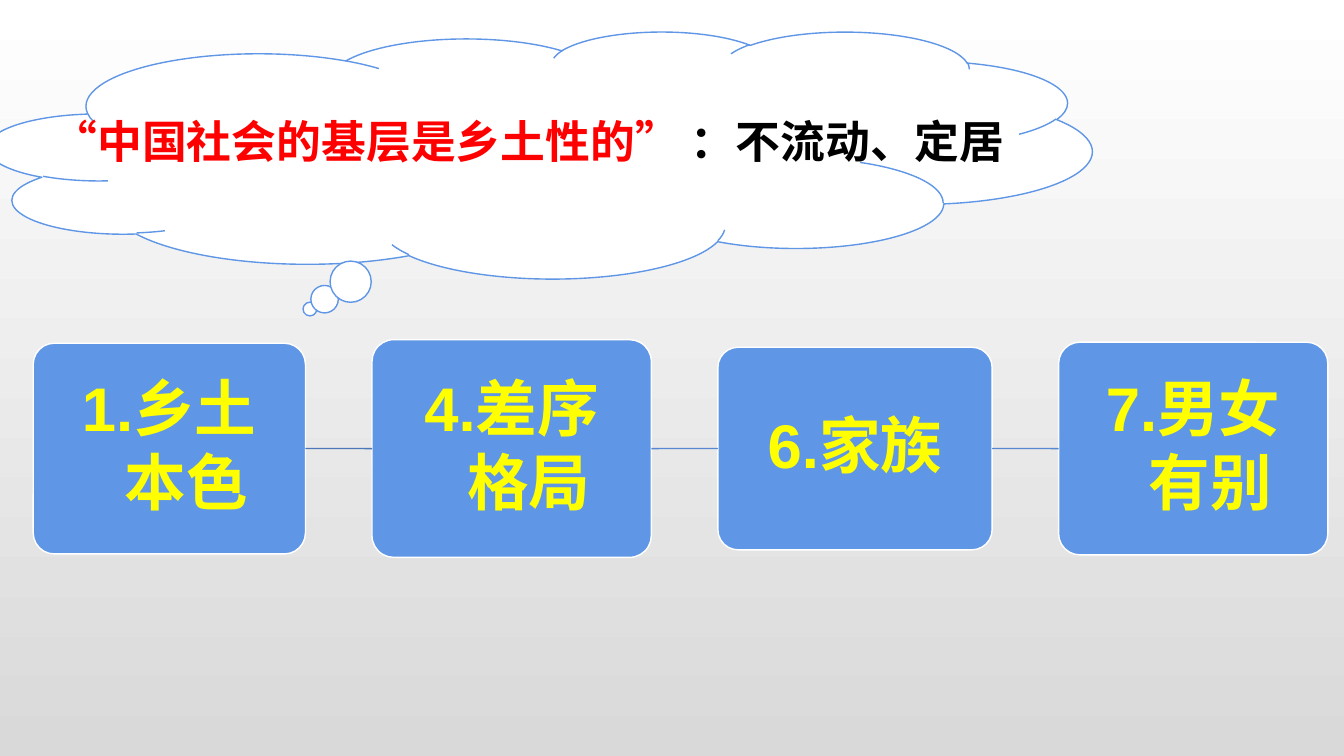
"""Build a slide with a thought cloud above a chain of four chapter boxes."""
import pptx
import pptx.dml.color
import pptx.enum.shapes
import pptx.enum.text
import pptx.oxml
import pptx.util

SLIDE_WIDTH, SLIDE_HEIGHT = 13.33, 7.5
COLORS = {
    "top": "FFFFFF", "bottom": "D9D9D9", "box": "6096E6", "white": "FFFFFF",
    "label": "FFFF00", "quote": "FF0000", "remark": "000000",
}
TITLE = [("“中国社会的基层是乡土性的”", "quote"), (" ：不流动、定居", "remark")]
CHAPTERS = [
    (["1.乡土", "本色"], 2.7, 2.09),
    (["4.差序", "格局"], 2.77, 2.16),
    (["6.家族"], 2.72, 2.01),
    (["7.男女", "有别"], 2.67, 2.11),
]
LINK_COLORS = ["4D78B8", "5788D1", "5788D1"]
CHAIN_LEFT, CHAIN_MIDDLE, CHAIN_GAP = 0.33, 4.45, 0.66
SECOND_LINE_INDENT = 0.34
CLOUD = (-0.12, 0.31, 10.95, 2.45)
TITLE_BOX = (0.42, 1.08, 10.95, 0.64)

inches = pptx.util.Inches
shape_types = pptx.enum.shapes.MSO_SHAPE


def rgb(value):
    """Turn a hex string into a colour."""
    return pptx.dml.color.RGBColor.from_string(value)


def add_outlined_shape(slide, kind, box, fill, line):
    """Add a filled shape with a thin outline and no shadow."""
    shape = slide.shapes.add_shape(kind, *map(inches, box))
    shape.shadow.inherit = False
    shape.fill.solid()
    shape.fill.fore_color.rgb = rgb(COLORS[fill])
    shape.line.color.rgb = rgb(COLORS[line])
    shape.line.width = pptx.util.Pt(1)
    return shape


def format_run(run, size, color):
    """Set bold Arial in the given size and colour."""
    run.font.name = "Arial"
    run.font.size = pptx.util.Pt(size)
    run.font.bold = True
    run.font.color.rgb = rgb(COLORS[color])


def paint_background(slide):
    """Fill the background with a vertical gradient."""
    fill = slide.background.fill
    fill.gradient()
    fill.gradient_angle = 270
    for stop, name, position in zip(fill.gradient_stops, ("top", "bottom"), (0, 1)):
        stop.color.rgb = rgb(COLORS[name])
        stop.position = position


def add_chapter(slide, lines, left, width, height):
    """Add one rounded box with its centred label."""
    box = (left, CHAIN_MIDDLE - height / 2, width, height)
    shape = add_outlined_shape(slide, shape_types.ROUNDED_RECTANGLE, box, "box", "white")
    shape.adjustments[0] = 0.1
    frame = shape.text_frame
    frame.word_wrap = True
    frame.vertical_anchor = pptx.enum.text.MSO_ANCHOR.MIDDLE
    frame.margin_left = frame.margin_right = inches(0.03)
    frame.margin_top = frame.margin_bottom = inches(0.03)
    frame.text = "\n".join(lines)
    for index, paragraph in enumerate(frame.paragraphs):
        paragraph.alignment = pptx.enum.text.PP_ALIGN.CENTER
        paragraph.line_spacing = 0.9
        paragraph.space_after = pptx.util.Pt(6)
        if index:
            paragraph._p.get_or_add_pPr().set("marL", str(inches(SECOND_LINE_INDENT)))
        format_run(paragraph.runs[0], 44, "label")
    return shape


def add_link(slide, start, end, color):
    """Join two neighbouring boxes with a line."""
    link = slide.shapes.add_connector(pptx.enum.shapes.MSO_CONNECTOR.STRAIGHT, 0, 0, 0, 0)
    link.begin_connect(start, 3)
    link.end_connect(end, 1)
    link.line.color.rgb = rgb(color)
    link.line.width = pptx.util.Pt(1)
    link._element.spPr.append(pptx.oxml.parse_xml(
        '<a:effectLst xmlns:a="http://schemas.openxmlformats.org/drawingml/2006/main"/>'))


def place_title(slide):
    """Move the title in front of the cloud and format it."""
    title = slide.shapes.title
    title.left, title.top, title.width, title.height = map(inches, TITLE_BOX)
    frame = title.text_frame
    frame.word_wrap = True
    frame.auto_size = pptx.enum.text.MSO_AUTO_SIZE.SHAPE_TO_FIT_TEXT
    frame.vertical_anchor = pptx.enum.text.MSO_ANCHOR.TOP
    paragraph = frame.paragraphs[0]
    paragraph.alignment = pptx.enum.text.PP_ALIGN.LEFT
    for text, color in TITLE:
        run = paragraph.add_run()
        run.text = text
        format_run(run, 32, color)
    slide.shapes._spTree.append(title._element)


def main():
    """Assemble and save the presentation."""
    presentation = pptx.Presentation()
    presentation.slide_width = inches(SLIDE_WIDTH)
    presentation.slide_height = inches(SLIDE_HEIGHT)
    slide = presentation.slides.add_slide(presentation.slide_layouts.get_by_name("Title Only"))
    paint_background(slide)

    boxes, left = [], CHAIN_LEFT
    for lines, width, height in CHAPTERS:
        boxes.append(add_chapter(slide, lines, left, width, height))
        left += width + CHAIN_GAP
    for start, end, color in zip(boxes, boxes[1:], LINK_COLORS):
        add_link(slide, start, end, color)

    add_outlined_shape(slide, shape_types.CLOUD_CALLOUT, CLOUD, "white", "box")
    place_title(slide)
    presentation.save("out.pptx")


if __name__ == "__main__":
    main()
